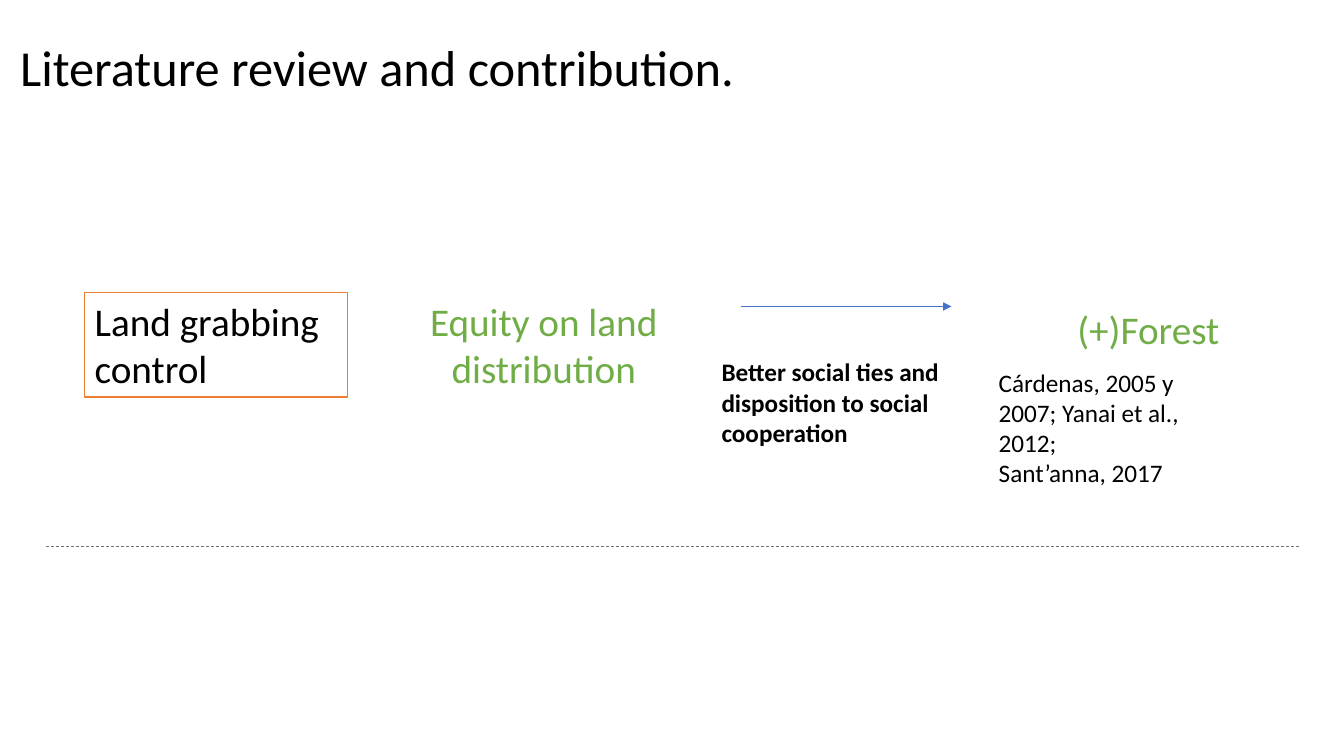
from dataclasses import dataclass
from typing import Optional

from lxml import etree
from pptx import Presentation
from pptx import util as u
from pptx.dml.color import RGBColor
from pptx.enum import dml, shapes, text
from pptx.oxml import ns

FONT = "Calibri"
COLOURS = {
    "black": "000000",
    "white": "FFFFFF",
    "green": "70AD47",
    "orange": "ED7D31",
    "blue": "4472C4",
    "grey": "767171",
}


@dataclass
class Label:
    lines: list[str]
    left: float
    top: float
    width: float
    height: float
    size: float = 28
    colour: str = "black"
    bold: bool = False
    centred: bool = False
    wrap: bool = True
    outline: Optional[str] = None


@dataclass
class Rule:
    left: float
    right: float
    y: float
    colour: str
    dashed: bool = False
    arrow: bool = False


# Stages of the argument with their sources, lengths in points
LABELS = [
    Label(["Land grabbing control"], 60.5, 208.8, 187.9, 74.9, outline="orange"),
    Label(["Equity on land distribution"], 285.1, 208.8, 206.6, 74.9,
          colour="green", centred=True),
    Label(["Better social ties and disposition to social cooperation"],
          508.3, 251.3, 225.4, 72.7, size=18, bold=True),
    Label(["Cárdenas, 2005 y 2007; Yanai et al., 2012;", "Sant’anna, 2017"],
          706.3, 258.5, 173.5, 94.3, size=18),
    Label(["(+)Forest"], 762.5, 214.6, 117.4, 41, colour="green", wrap=False),
]
RULES = [
    Rule(529.2, 679.7, 218.9, "blue", arrow=True),
    Rule(33.1, 928.8, 390.2, "grey", dashed=True),
]


def rgb(name: str) -> RGBColor:
    return RGBColor.from_string(COLOURS[name])


def style_spans(frame, size: float, colour: str, bold: bool, align) -> None:
    for para in frame.paragraphs:
        para.alignment = align
        for span in para.runs:
            span.font.name = FONT
            span.font.size = u.Pt(size)
            span.font.bold = bold
            span.font.color.rgb = rgb(colour)


def draw_title(page, wording: str) -> None:
    title = page.shapes.title
    title.left, title.top = u.Pt(7.2), u.Pt(-2.2)
    title.width, title.height = u.Pt(828), u.Pt(104.4)
    frame = title.text_frame
    frame.text = wording
    frame.auto_size = text.MSO_AUTO_SIZE.NONE
    frame.vertical_anchor = text.MSO_ANCHOR.MIDDLE
    frame.paragraphs[0].line_spacing = 0.9
    style_spans(frame, 36, "black", False, text.PP_ALIGN.LEFT)


def draw_label(page, label: Label) -> None:
    place = [u.Pt(v) for v in (label.left, label.top, label.width, label.height)]
    if label.outline:
        box = page.shapes.add_shape(shapes.MSO_SHAPE.RECTANGLE, *place)
        box.shadow.inherit = False
        box.fill.solid()
        box.fill.fore_color.rgb = rgb("white")
        box.line.color.rgb = rgb(label.outline)
        box.line.width = u.Pt(1)
    else:
        box = page.shapes.add_textbox(*place)
    frame = box.text_frame
    frame.text = "\n".join(label.lines)
    frame.word_wrap = label.wrap
    frame.auto_size = text.MSO_AUTO_SIZE.SHAPE_TO_FIT_TEXT
    frame.vertical_anchor = text.MSO_ANCHOR.TOP
    align = text.PP_ALIGN.CENTER if label.centred else text.PP_ALIGN.LEFT
    style_spans(frame, label.size, label.colour, label.bold, align)


def draw_rule(page, rule: Rule) -> None:
    line = page.shapes.add_connector(
        shapes.MSO_CONNECTOR.STRAIGHT,
        u.Pt(rule.left), u.Pt(rule.y), u.Pt(rule.right), u.Pt(rule.y))
    line.line.color.rgb = rgb(rule.colour)
    line.line.width = u.Pt(0.5)
    if rule.dashed:
        line.line.dash_style = dml.MSO_LINE.DASH
    properties = line._element.spPr
    if rule.arrow:
        stroke = properties.find(ns.qn("a:ln"))
        etree.SubElement(stroke, ns.qn("a:tailEnd"), type="triangle")
    etree.SubElement(properties, ns.qn("a:effectLst"))


def main() -> None:
    deck = Presentation()
    deck.slide_width, deck.slide_height = u.Pt(960), u.Pt(540)
    page = deck.slides.add_slide(deck.slide_layouts.get_by_name("Title Only"))
    draw_title(page, "Literature review and contribution.")
    for label in LABELS:
        draw_label(page, label)
    for rule in RULES:
        draw_rule(page, rule)
    deck.save("out.pptx")


if __name__ == "__main__":
    main()
